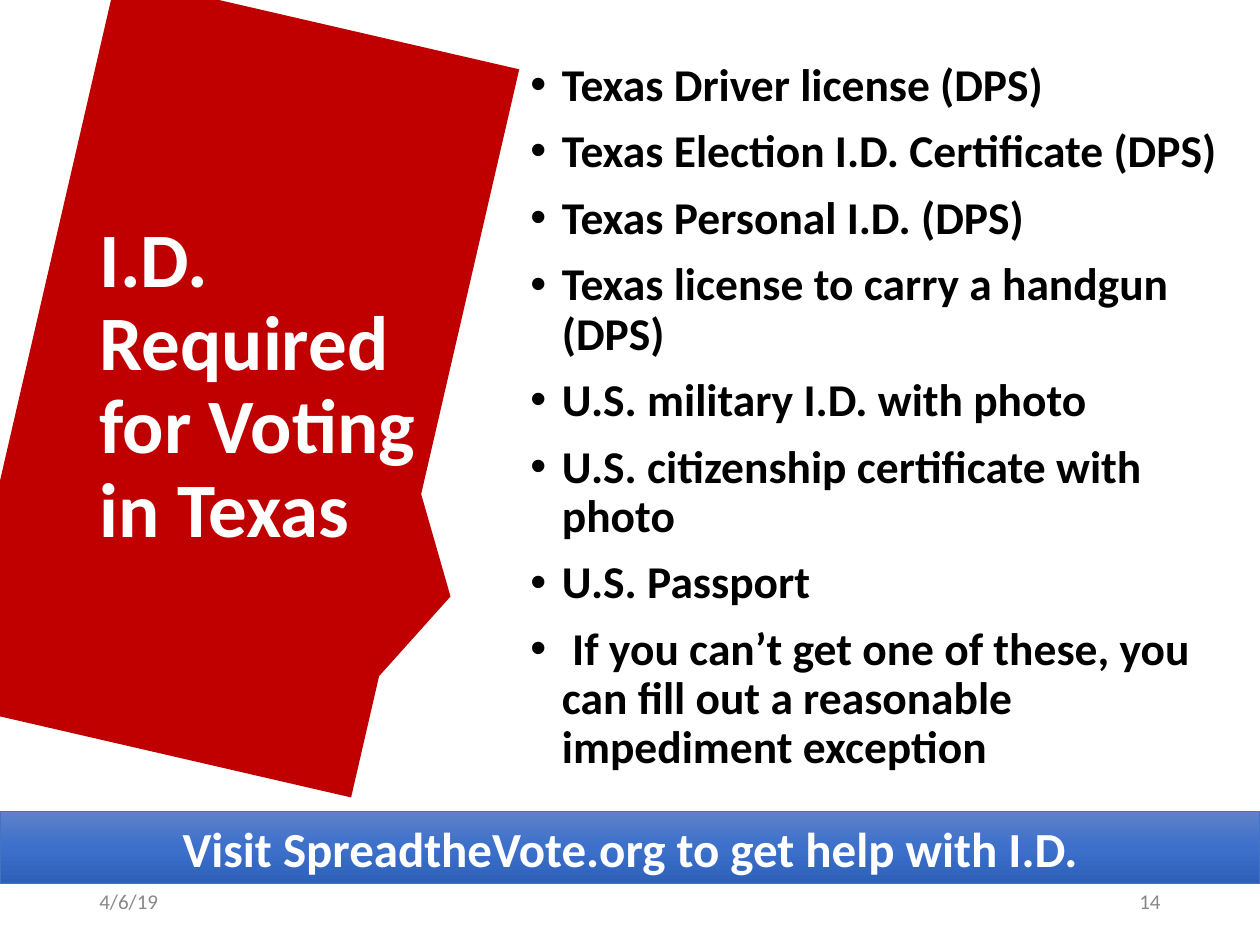
"""Build the slide on I.D. required for voting in Texas."""
from copy import deepcopy

from lxml import etree
from pptx import Presentation
from pptx.dml.color import RGBColor
from pptx.enum import shapes, text
from pptx.oxml.ns import qn
from pptx.util import Pt

COLORS = {"red": "C00000", "white": "FFFFFF", "black": "000000",
          "gray": "888888", "border": "4472C4"}
GRADIENT = [(0, "5F82CA"), (0.5, "3C70CA"), (1, "2E60B9")]
FONT = "Calibri"
TITLE = "I.D. Required for Voting in Texas"
IDS = [
    "Texas Driver license (DPS)",
    "Texas Election I.D. Certificate (DPS)",
    "Texas Personal I.D. (DPS)",
    "Texas license to carry a handgun (DPS)",
    "U.S. military I.D. with photo",
    "U.S. citizenship certificate with photo",
    "U.S. Passport",
    " If you can’t get one of these, you can fill out a reasonable impediment exception",
]
BANNER = "Visit SpreadtheVote.org to get help with I.D."
FOOTERS = [("4/6/19", 49.7, text.PP_ALIGN.LEFT), ("14", 508.3, text.PP_ALIGN.RIGHT)]


def rgb(name):
    return RGBColor.from_string(COLORS[name])


def place(sp, left, top, width, height):
    sp.left, sp.top, sp.width, sp.height = map(Pt, (left, top, width, height))


def write(sp, lines, size, color, bold=True, align=text.PP_ALIGN.LEFT,
          anchor=text.MSO_ANCHOR.MIDDLE, spacing=1.0):
    tf = sp.text_frame
    tf.text = "\n".join(lines)
    tf.word_wrap = True
    tf.auto_size = text.MSO_AUTO_SIZE.NONE
    tf.vertical_anchor = anchor
    for p in tf.paragraphs:
        p.alignment = align
        p.line_spacing = spacing
        p.space_before = Pt(0)
        for r in p.runs:
            r.font.name, r.font.size, r.font.bold = FONT, Pt(size), bold
            r.font.color.rgb = rgb(color)


def add_bullet(p, indent):
    pPr = p._p.get_or_add_pPr()
    pPr.set("marL", str(Pt(indent)))
    pPr.set("indent", str(-Pt(indent)))
    clr = etree.SubElement(pPr, qn("a:buClr"))
    etree.SubElement(clr, qn("a:srgbClr"), val=COLORS["black"])
    etree.SubElement(pPr, qn("a:buFont"), typeface="Arial")
    etree.SubElement(pPr, qn("a:buChar"), char="•")


def fill_gradient(sp):
    sp.fill.gradient()
    sp.fill.gradient_angle = 270
    stops = sp._element.spPr.find(qn("a:gradFill")).find(qn("a:gsLst"))
    stops.append(deepcopy(stops[-1]))
    for stop, (position, color) in zip(sp.fill.gradient_stops, GRADIENT):
        stop.position = position
        stop.color.rgb = RGBColor.from_string(color)


def main():
    prs = Presentation()
    prs.slide_width, prs.slide_height = Pt(720), Pt(540)
    s = prs.slides.add_slide(prs.slide_layouts[1])
    title, body = s.placeholders

    callout = s.shapes.add_shape(shapes.MSO_SHAPE.RECTANGULAR_CALLOUT,
                                 Pt(-79.9), Pt(103), Pt(427), Pt(236.2))
    callout.rotation = 283
    callout.adjustments[0], callout.adjustments[1] = -0.208, 0.625
    callout.shadow.inherit = False
    callout.fill.solid()
    callout.fill.fore_color.rgb = rgb("red")
    callout.line.fill.background()
    title._element.addprevious(callout._element)

    place(title, 49.7, 31.7, 203.8, 379.4)
    write(title, [TITLE], 44, "white", spacing=0.9)

    place(body, 295.9, 31.7, 408.2, 432.7)
    write(body, IDS, 26, "black", anchor=text.MSO_ANCHOR.TOP, spacing=0.9)
    for i, p in enumerate(body.text_frame.paragraphs):
        add_bullet(p, 18)
        p.space_before = Pt(10 if i else 0)

    for label, left, align in FOOTERS:
        box = s.shapes.add_textbox(Pt(left), Pt(500.4), Pt(162), Pt(28.8))
        write(box, [label], 12, "gray", bold=False, align=align)

    banner = s.shapes.add_shape(shapes.MSO_SHAPE.RECTANGLE,
                                Pt(0), Pt(463.7), Pt(720), Pt(41.2))
    banner.shadow.inherit = False
    fill_gradient(banner)
    banner.line.color.rgb = rgb("border")
    banner.line.width = Pt(0.75)
    write(banner, [BANNER], 28, "white", align=text.PP_ALIGN.CENTER)

    prs.save("out.pptx")


if __name__ == "__main__":
    main()
